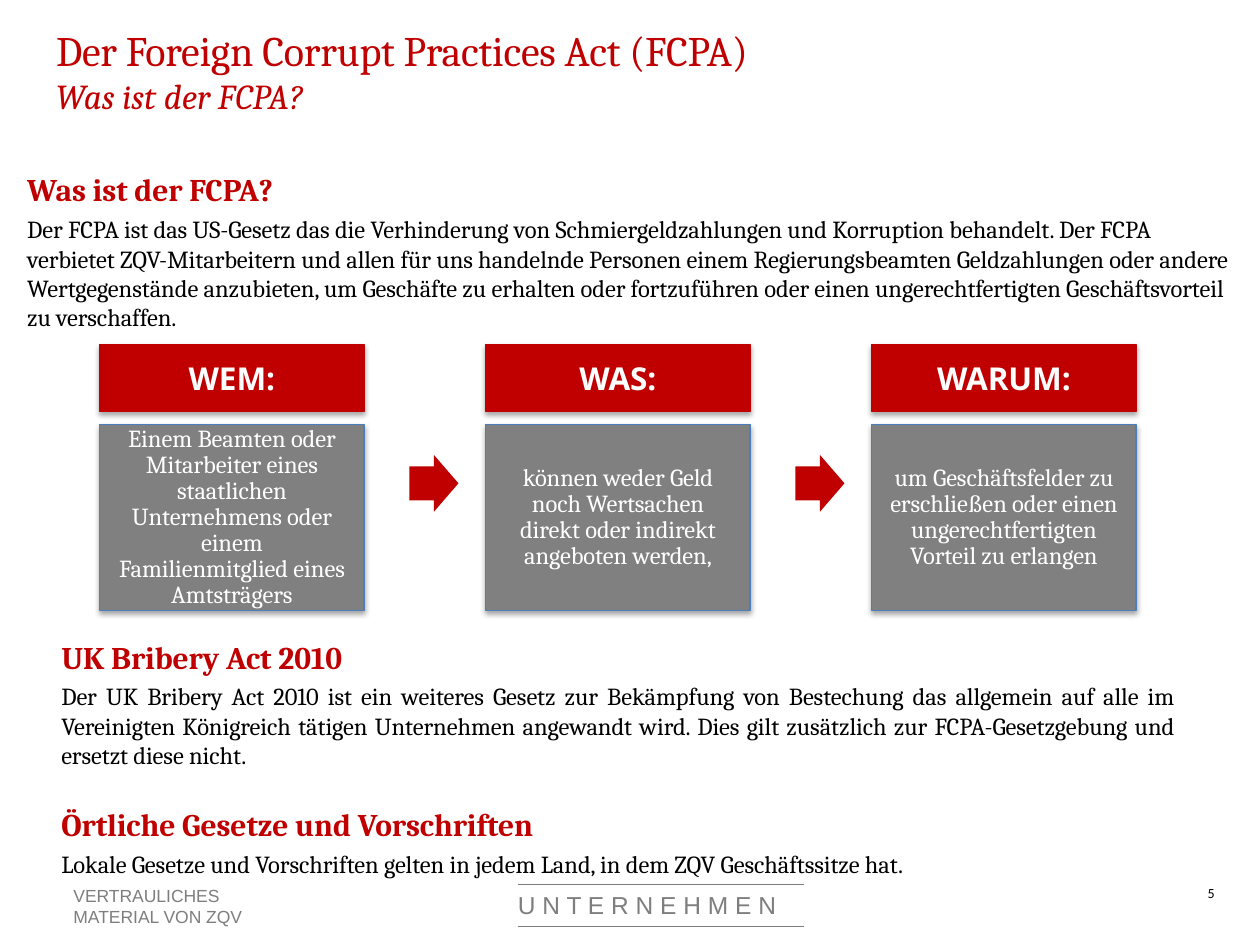
from dataclasses import dataclass

from lxml.etree import SubElement
from pptx import Presentation
from pptx.dml.color import RGBColor
from pptx.enum.shapes import MSO_CONNECTOR, MSO_SHAPE
from pptx.enum.text import MSO_ANCHOR, MSO_AUTO_SIZE, PP_ALIGN
from pptx.oxml import parse_xml
from pptx.oxml.ns import nsdecls, qn
from pptx.util import Pt


@dataclass(frozen=True)
class Theme:
    red: str = "C00000"
    grey: str = "808080"
    footer_grey: str = "7E7E7E"
    edge_blue: str = "4B7EBC"
    white: str = "FFFFFF"
    black: str = "000000"
    serif: str = "Cambria"
    label: str = "Open Sans"
    footer: str = "Arial"
    number: str = "Calibri"
    title_size: int = 24
    subtitle_size: int = 20
    heading_size: int = 18
    body_size: int = 14
    footer_size: int = 10
    number_size: int = 8


SHADOW = (
    f'<a:effectLst {nsdecls("a")}><a:outerShdw blurRad="{Pt(3.1)}" dist="{Pt(1.8)}" '
    'dir="5400000" rotWithShape="0"><a:srgbClr val="000000"><a:alpha val="35000"/>'
    "</a:srgbClr></a:outerShdw></a:effectLst>"
)


def apply(target, formats):
    for name, value in formats.items():
        setattr(target, name, value)


class SlideBuilder:
    def __init__(self, slide, theme):
        self.slide = slide
        self.theme = theme

    def place(self, shape, left, top, width, height):
        apply(shape, dict(left=Pt(left), top=Pt(top), width=Pt(width), height=Pt(height)))

    def frame(self, shape, margins=(0, 0, 0, 0), anchor=MSO_ANCHOR.TOP, wrap=True):
        left, top, right, bottom = margins
        apply(shape.text_frame, dict(
            margin_left=Pt(left), margin_top=Pt(top), margin_right=Pt(right),
            margin_bottom=Pt(bottom), vertical_anchor=anchor, word_wrap=wrap,
            auto_size=MSO_AUTO_SIZE.NONE))
        return shape.text_frame

    def run(self, paragraph, text, size, color, font=None, bold=False, italic=False, spacing=0):
        """Add a run; spacing is the tracking in hundredths of a point."""
        run = paragraph.add_run()
        run.text = text
        apply(run.font, dict(name=font or self.theme.serif, size=Pt(size), bold=bold, italic=italic))
        run.font.color.rgb = RGBColor.from_string(color)
        if spacing:
            run._r.get_or_add_rPr().set("spc", str(spacing))

    def title(self, box, heading, subtitle):
        theme = self.theme
        shape = self.slide.shapes.title
        self.place(shape, *box)
        paragraph = self.frame(shape).paragraphs[0]
        paragraph.alignment = PP_ALIGN.LEFT
        self.run(paragraph, heading, theme.title_size, theme.red, spacing=-10)
        paragraph.add_line_break()
        self.run(paragraph, subtitle, theme.subtitle_size, theme.red, italic=True)

    def body(self, index, box, sections, alignment):
        """Fill a body placeholder with (heading, text) sections."""
        theme = self.theme
        shape = self.slide.placeholders[index]
        self.place(shape, *box)
        frame = self.frame(shape, margins=(0, 5.8, 0, 0))
        for number, (heading, text) in enumerate(sections):
            lines = [
                (heading, theme.heading_size, theme.red, True, 20 if number else 0),
                (text, theme.body_size, theme.black, False, 3.5),
            ]
            for words, size, color, bold, before in lines:
                first = number == 0 and bold
                paragraph = frame.paragraphs[0] if first else frame.add_paragraph()
                properties = paragraph._p.get_or_add_pPr()
                properties.set("marL", "0")
                properties.set("indent", "0")
                SubElement(properties, qn("a:buNone"))
                apply(paragraph, dict(alignment=alignment, space_before=Pt(before)))
                self.run(paragraph, words, size, color, bold=bold, spacing=-5)

    def card(self, box, text, fill, line, size, font=None, bold=False, line_spacing=1.0):
        shape = self.slide.shapes.add_shape(MSO_SHAPE.RECTANGLE, *map(Pt, box))
        shape.fill.solid()
        shape.fill.fore_color.rgb = RGBColor.from_string(fill)
        shape.line.color.rgb = RGBColor.from_string(line)
        shape.line.width = Pt(0.75)
        shape._element.spPr.append(parse_xml(SHADOW))
        frame = self.frame(shape, margins=(9, 3.6, 9, 3.6), anchor=MSO_ANCHOR.MIDDLE)
        paragraph = frame.paragraphs[0]
        apply(paragraph, dict(alignment=PP_ALIGN.CENTER, line_spacing=line_spacing))
        self.run(paragraph, text, size, self.theme.white, font, bold, spacing=-5)

    def arrow(self, box):
        shape = self.slide.shapes.add_shape(MSO_SHAPE.RIGHT_ARROW, *map(Pt, box))
        shape.adjustments[0] = 0.6
        shape.adjustments[1] = 0.5
        shape.shadow.inherit = False
        shape.fill.solid()
        shape.fill.fore_color.rgb = RGBColor.from_string(self.theme.red)
        shape.line.fill.background()

    def rule(self, left, top, width):
        line = self.slide.shapes.add_connector(
            MSO_CONNECTOR.STRAIGHT, Pt(left), Pt(top), Pt(left + width), Pt(top))
        line.line.color.rgb = RGBColor.from_string(self.theme.footer_grey)
        line.line.width = Pt(0.5)
        SubElement(line._element.spPr, qn("a:effectLst"))

    def label(self, box, text, size, color, font, wrap=True, line_spacing=1.0):
        shape = self.slide.shapes.add_textbox(*map(Pt, box))
        paragraph = self.frame(shape, wrap=wrap).paragraphs[0]
        paragraph.line_spacing = line_spacing
        self.run(paragraph, text, size, color, font)


FCPA = [(
    "Was ist der FCPA?",
    "Der FCPA ist das US-Gesetz das die Verhinderung von Schmiergeldzahlungen und Korruption "
    "behandelt. Der FCPA verbietet ZQV-Mitarbeitern und allen für uns handelnde Personen einem "
    "Regierungsbeamten Geldzahlungen oder andere Wertgegenstände anzubieten, um Geschäfte zu "
    "erhalten oder fortzuführen oder einen ungerechtfertigten Geschäftsvorteil zu verschaffen.",
)]
OTHER_LAWS = [
    ("UK Bribery Act 2010",
     "Der UK Bribery Act 2010 ist ein weiteres Gesetz zur Bekämpfung von Bestechung das allgemein "
     "auf alle im Vereinigten Königreich tätigen Unternehmen angewandt wird. Dies gilt zusätzlich "
     "zur FCPA-Gesetzgebung und ersetzt diese nicht."),
    ("Örtliche Gesetze und Vorschriften",
     "Lokale Gesetze und Vorschriften gelten in jedem Land, in dem ZQV Geschäftssitze hat."),
]
QUESTIONS = [
    ("WEM:", "Einem Beamten oder Mitarbeiter eines staatlichen Unternehmens oder einem "
             "Familienmitglied eines Amtsträgers"),
    ("WAS:", "können weder Geld noch Wertsachen direkt oder indirekt angeboten werden,"),
    ("WARUM:", "um Geschäftsfelder zu erschließen oder einen ungerechtfertigten Vorteil "
               "zu erlangen"),
]


def main():
    deck = Presentation()
    deck.slide_width, deck.slide_height = Pt(720), Pt(540)
    theme = Theme()
    page = SlideBuilder(deck.slides.add_slide(deck.slide_layouts[3]), theme)

    page.title((32, 14, 450, 83), "Der Foreign Corrupt Practices Act (FCPA)", "Was ist der FCPA?")
    page.body(1, (15.5, 91.5, 690, 101.5), FCPA, PP_ALIGN.LEFT)
    page.body(2, (35, 358.5, 636, 149), OTHER_LAWS, PP_ALIGN.JUSTIFY)

    first_left, step, width = 57, 220.6, 151
    for column, (question, answer) in enumerate(QUESTIONS):
        left = first_left + column * step
        page.card((left, 197, width, 38), question, theme.red, theme.red,
                  theme.heading_size, theme.label, bold=True)
        page.card((left, 242.5, width, 106.5), answer, theme.grey, theme.edge_blue,
                  theme.body_size, line_spacing=0.88)
        if column < len(QUESTIONS) - 1:
            page.arrow((left + 177, 260, 28, 32.4))

    for top in (505.5, 529.2):
        page.rule(296, top, 163.5)
    page.label((42, 505.5, 100, 25), "VERTRAULICHES MATERIAL VON ZQV",
               theme.footer_size, theme.footer_grey, theme.footer)
    page.label((296, 509, 161, 18), "U N T E R N E H M E N", theme.body_size,
               theme.footer_grey, theme.footer, wrap=False, line_spacing=Pt(16.5))
    page.label((690, 505.5, 12, 10), "5", theme.number_size, theme.black, theme.number, wrap=False)

    deck.save("out.pptx")


if __name__ == "__main__":
    main()
